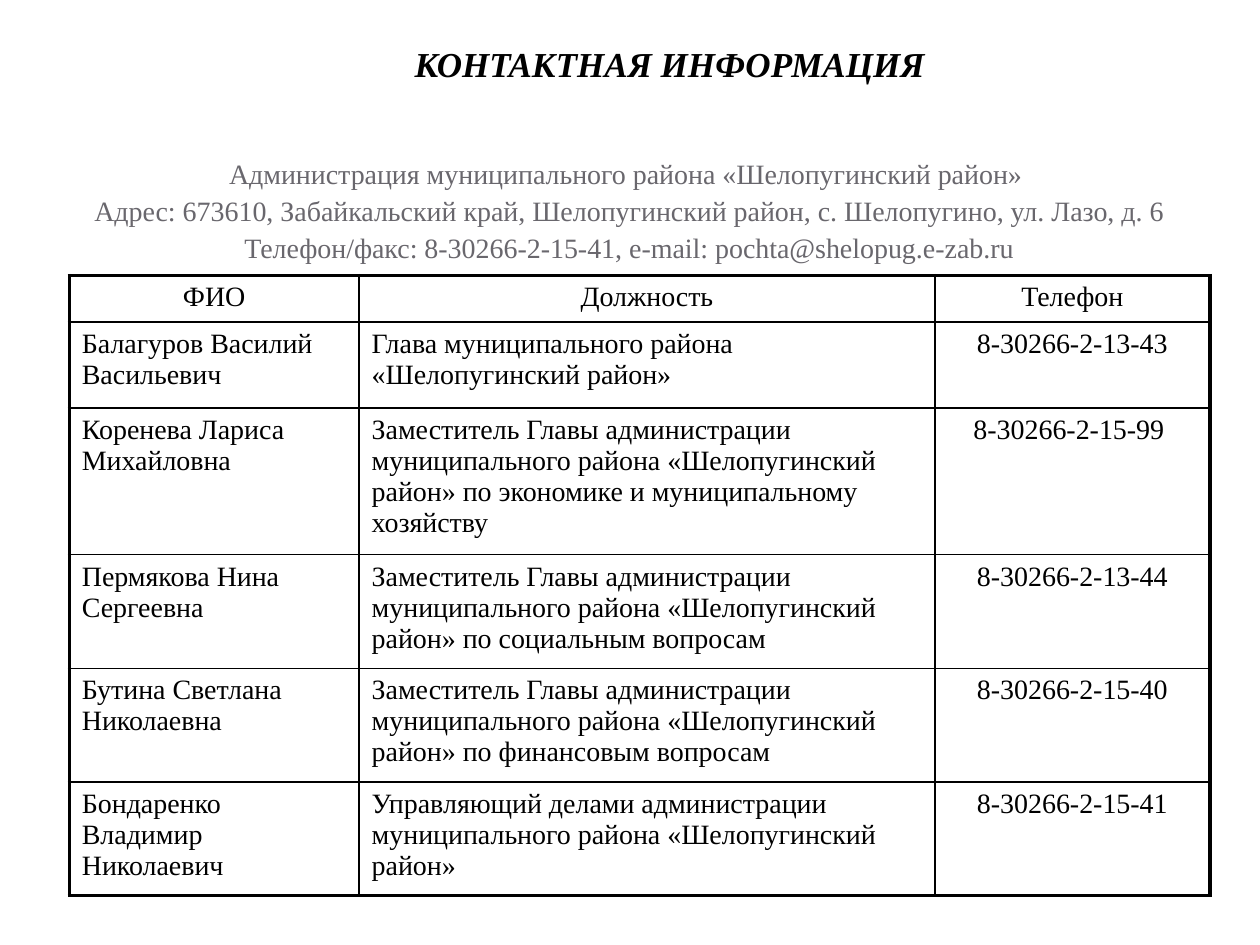
"""Build the contact information slide with its table of officials."""
from lxml.etree import SubElement
from pptx import Presentation
from pptx.dml.color import RGBColor as Rgb
from pptx.enum.text import MSO_ANCHOR as Anchor, PP_ALIGN as Align
from pptx.oxml.ns import qn
from pptx.util import Pt

HUES = {"ink": "000000", "gray": "69676D"}
WIDTHS = (165.6, 329, 157.2)
HEIGHTS = (25.4, 49.1, 83.7, 64.9, 64.9, 64.9)
HEAD = ("ФИО", "Должность", "Телефон")
DEPUTY = ("Заместитель Главы администрации муниципального района "
          "«Шелопугинский район» по ")
STAFF = (
    ("Балагуров Василий Васильевич",
     "Глава муниципального района «Шелопугинский район»",
     "8-30266-2-13-43"),
    ("Коренева Лариса Михайловна",
     DEPUTY + "экономике и муниципальному хозяйству",
     "8-30266-2-15-99 "),
    ("Пермякова Нина Сергеевна",
     DEPUTY + "социальным вопросам",
     "8-30266-2-13-44"),
    ("Бутина Светлана Николаевна",
     DEPUTY + "финансовым вопросам",
     "8-30266-2-15-40"),
    ("Бондаренко Владимир Николаевич",
     "Управляющий делами администрации муниципального района "
     "«Шелопугинский район»",
     "8-30266-2-15-41"),
)
ADDRESS = (
    "Администрация муниципального района «Шелопугинский район» ",
    "Адрес: 673610, Забайкальский край, Шелопугинский район, "
    "с. Шелопугино, ул. Лазо, д. 6",
    "Телефон/факс: 8-30266-2-15-41, e-mail: pochta@shelopug.e-zab.ru",
)


class Page:
    """Holds the text style and the current slide."""

    font = "Times New Roman"
    size = 16
    thin, thick = 1, 2.25

    def __init__(self, slide):
        self.slide = slide

    def style(self, frame, hue="ink", size=None, align=Align.CENTER, bold=False):
        for para in frame.paragraphs:
            para.alignment = align
            for run in para.runs:
                font = run.font
                font.name = self.font
                font.size = Pt(size or self.size)
                font.bold = font.italic = bold
                font.color.rgb = Rgb.from_string(HUES[hue])

    def title(self, text, left, top, width, height):
        shape = self.slide.shapes.title
        shape.left, shape.top = Pt(left), Pt(top)
        shape.width, shape.height = Pt(width), Pt(height)
        frame = shape.text_frame
        frame.text = text
        frame.vertical_anchor = Anchor.MIDDLE
        self.style(frame, size=20, bold=True)

    def text(self, lines, left, top, width, height):
        box = self.slide.shapes.add_textbox(
            Pt(left), Pt(top), Pt(width), Pt(height))
        frame = box.text_frame
        frame.word_wrap = True
        frame.text = "\n".join(lines)
        for para in frame.paragraphs:
            para.line_spacing = 1.1
        self.style(frame, hue="gray")

    def edge(self, cell, side, width):
        props = cell._tc.get_or_add_tcPr()
        line = SubElement(props, qn("a:ln" + side), w=str(Pt(width)))
        fill = SubElement(line, qn("a:solidFill"))
        SubElement(fill, qn("a:srgbClr"), val=HUES["ink"])

    def table(self, rows, left, top, widths, heights):
        frame = self.slide.shapes.add_table(
            len(rows), len(widths), Pt(left), Pt(top),
            Pt(sum(widths)), Pt(sum(heights)))
        grid = frame.table
        for col, width in zip(grid.columns, widths):
            col.width = Pt(width)
        for row, height in zip(grid.rows, heights):
            row.height = Pt(height)
        last, end = len(rows) - 1, len(widths) - 1
        for i, row in enumerate(rows):
            for j, text in enumerate(row):
                cell = grid.cell(i, j)
                cell.text_frame.text = text
                mid = i == 0 or j == end
                self.style(cell.text_frame,
                           align=Align.CENTER if mid else Align.LEFT)
                outer = {"L": j == 0, "R": j == end,
                         "T": i == 0, "B": i == last}
                for side, bold in outer.items():
                    self.edge(cell, side, self.thick if bold else self.thin)
                cell.fill.background()


def main():
    deck = Presentation()
    deck.slide_width, deck.slide_height = Pt(720), Pt(540)
    page = Page(deck.slides.add_slide(deck.slide_layouts[5]))
    page.title("КОНТАКТНАЯ ИНФОРМАЦИЯ", 67.7, 22.3, 630, 28)
    page.text(ADDRESS, 16.6, 84.2, 686, 73.4)
    page.table((HEAD, *STAFF), 39.6, 157.5, WIDTHS, HEIGHTS)
    deck.save("out.pptx")


if __name__ == "__main__":
    main()
